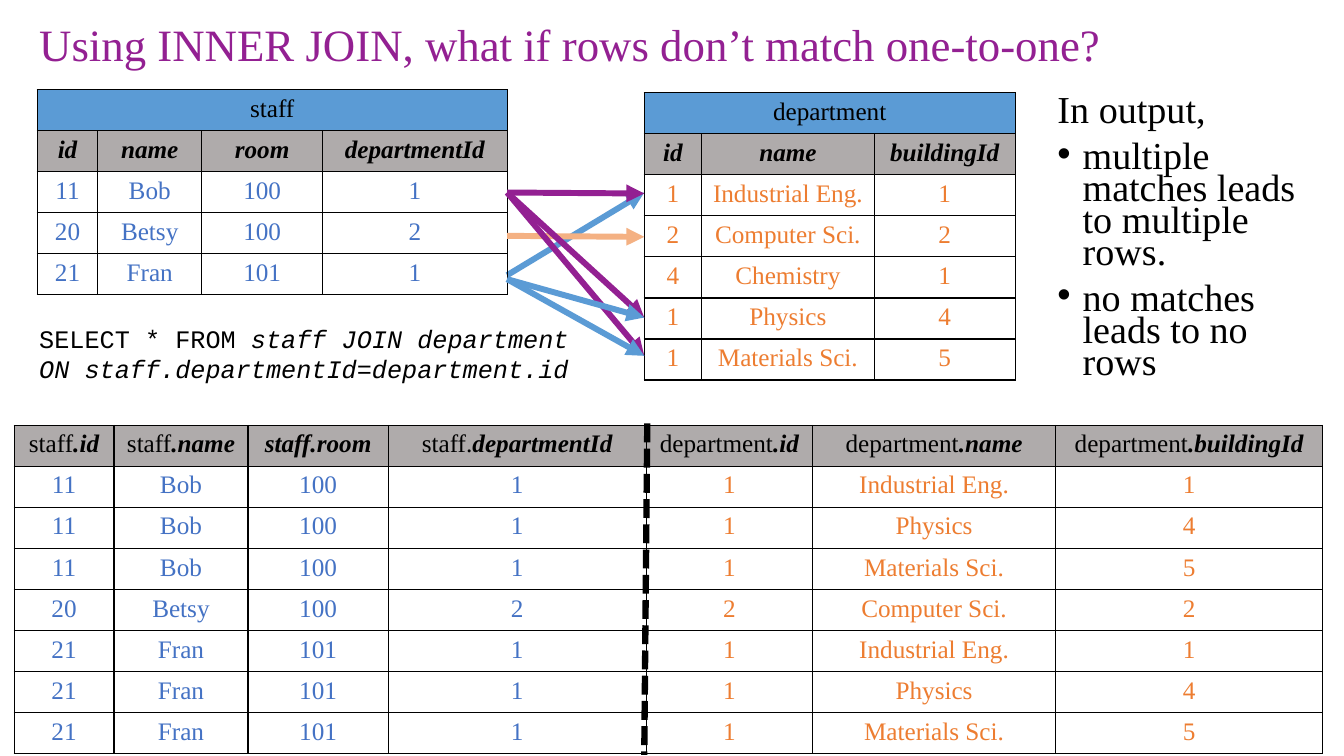
"""Build the slide on INNER JOIN with rows that do not match one-to-one."""
import pptx
import pptx.util
import pptx.dml.color
import pptx.enum.dml
import pptx.enum.shapes
import pptx.enum.text
import pptx.oxml.ns
from lxml import etree

SERIF, MONO = "Times New Roman", "Courier New"
BLACK, PURPLE, BLUE, PEACH = "000000", "932092", "5B9BD5", "F4B183"
GREY, STAFF_INK, DEPARTMENT_INK = "AFABAB", "4472C4", "ED7D31"
ROW = 2.85 / 7

STAFF = [(11, "Bob", 100, 1), (20, "Betsy", 100, 2), (21, "Fran", 101, 1)]
DEPARTMENTS = [
    (1, "Industrial Eng.", 1),
    (2, "Computer Sci.", 2),
    (4, "Chemistry", 1),
    (1, "Physics", 4),
    (1, "Materials Sci.", 5),
]
JOINED = [
    person + department
    for person in STAFF
    for department in DEPARTMENTS
    if person[3] == department[0]
]
STAFF_HEADS = [("", name) for name in ("id", "name", "room", "departmentId")]
DEPARTMENT_HEADS = [("", name) for name in ("id", "name", "buildingId")]
JOINED_HEADS = [
    ("staff", ".id"),
    ("staff", ".name"),
    ("", "staff.room"),
    ("staff.", "departmentId"),
    ("department", ".id"),
    ("department", ".name"),
    ("department", ".buildingId"),
]
STAFF_COLUMNS = [0.6, 1.03, 1.2, 1.83]
DEPARTMENT_COLUMNS = [0.57, 1.71, 1.4]
JOINED_COLUMNS = [0.99, 1.33, 1.39, 2.56, 1.65, 2.41, 2.65]

TITLE = "Using INNER JOIN, what if rows don’t match one-to-one?"
NOTES = [
    ("In output,", False),
    ("multiple matches leads to multiple rows.", True),
    ("no matches leads to no rows", True),
]
QUERY = [
    ("SELECT * FROM ", False),
    ("staff JOIN department ON staff.departmentId=department.id", True),
]
STAFF_EDGE, DEPARTMENT_EDGE = 5.03, 6.39
BACK_ARROWS = [(2.73, 1.91, BLUE)]
MIDDLE_ARROWS = [
    (1.91, 1.92, PURPLE),
    (2.34, 2.35, PEACH),
    (1.91, 3.15, PURPLE),
    (1.91, 3.53, PURPLE),
]
FRONT_ARROWS = [(2.77, 3.15, BLUE), (2.77, 3.53, BLUE)]


def inches(*lengths):
    return [pptx.util.Inches(length) for length in lengths]


def color(code):
    return pptx.dml.color.RGBColor.from_string(code)


def add_span(para, text, size=18, font=SERIF, ink=BLACK, bold=False, italic=False):
    span = para.add_run()
    span.text = text
    span.font.size = pptx.util.Pt(size)
    span.font.name = font
    span.font.color.rgb = color(ink)
    span.font.bold = bold
    span.font.italic = italic


def add_child(parent, tag, **attributes):
    child = etree.SubElement(parent, pptx.oxml.ns.qn(tag))
    for key, value in attributes.items():
        child.set(key, value)
    return child


def add_box(page, left, top, width, height):
    frame = page.shapes.add_textbox(*inches(left, top, width, height)).text_frame
    frame.word_wrap = True
    return frame


def fill_cell(cell, parts, fill=None, ink=BLACK):
    para = cell.text_frame.paragraphs[0]
    para.alignment = pptx.enum.text.PP_ALIGN.CENTER
    for text, strong in parts:
        if text:
            add_span(para, text, ink=ink, bold=strong, italic=strong)
    properties = cell._tc.get_or_add_tcPr()
    for side in ("a:lnL", "a:lnR", "a:lnT", "a:lnB"):
        border = add_child(properties, side, w="12700")
        add_child(add_child(border, "a:solidFill"), "a:srgbClr", val=BLACK)
    if fill:
        cell.fill.solid()
        cell.fill.fore_color.rgb = color(fill)
    else:
        cell.fill.background()


def add_grid(page, left, top, columns, heads, rows, inks, caption=None):
    first = 1 if caption else 0
    count = first + 1 + len(rows)
    frame = page.shapes.add_table(
        count, len(columns), *inches(left, top, sum(columns), count * ROW)
    )
    table = frame.table
    table.first_row = table.horz_banding = False
    for column, width in zip(table.columns, columns):
        column.width = pptx.util.Inches(width)
    for row in table.rows:
        row.height = pptx.util.Inches(ROW)
    if caption:
        table.cell(0, 0).merge(table.cell(0, len(columns) - 1))
        for index in range(len(columns)):
            text = "" if index else caption
            fill_cell(table.cell(0, index), [(text, False)], fill=BLUE)
    for index, (plain, strong) in enumerate(heads):
        parts = [(plain, False), (strong, True)]
        fill_cell(table.cell(first, index), parts, fill=GREY)
    for number, values in enumerate(rows, first + 1):
        for index, (value, ink) in enumerate(zip(values, inks)):
            fill_cell(table.cell(number, index), [(str(value), False)], ink=ink)


def add_line(page, start, end, ink, width):
    line = page.shapes.add_connector(
        pptx.enum.shapes.MSO_CONNECTOR.STRAIGHT, *inches(*start, *end)
    )
    line.line.color.rgb = color(ink)
    line.line.width = pptx.util.Pt(width)
    add_child(line._element.spPr, "a:effectLst")
    return line


def add_arrows(page, arrows):
    for start, end, ink in arrows:
        arrow = add_line(page, (STAFF_EDGE, start), (DEPARTMENT_EDGE, end), ink, 4.25)
        add_child(arrow.line._get_or_add_ln(), "a:tailEnd", type="triangle")


def add_notes(page):
    frame = add_box(page, 10.39, 0.92, 2.73, 3.19)
    for index, (text, bulleted) in enumerate(NOTES):
        para = frame.add_paragraph() if index else frame.paragraphs[0]
        para.line_spacing = 0.7
        para.space_before = pptx.util.Pt(10)
        add_span(para, text, size=27.2)
        if bulleted:
            properties = para._p.get_or_add_pPr()
            properties.set("marL", "228600")
            properties.set("indent", "-228600")
            add_child(properties, "a:buFont", typeface="Arial")
            add_child(properties, "a:buChar", char="•")


def main():
    deck = pptx.Presentation()
    deck.slide_width, deck.slide_height = inches(13.33, 7.5)
    page = deck.slides.add_slide(deck.slide_layouts[6])

    add_arrows(page, BACK_ARROWS)
    add_grid(page, 0.37, 0.89, STAFF_COLUMNS, STAFF_HEADS, STAFF,
             [STAFF_INK] * 4, "staff")
    add_grid(page, DEPARTMENT_EDGE, 0.92, DEPARTMENT_COLUMNS, DEPARTMENT_HEADS,
             DEPARTMENTS, [DEPARTMENT_INK] * 3, "department")
    add_arrows(page, MIDDLE_ARROWS)

    title = add_box(page, 0.29, 0.08, 11.55, 0.77)
    title.vertical_anchor = pptx.enum.text.MSO_ANCHOR.MIDDLE
    title.paragraphs[0].line_spacing = 0.9
    add_span(title.paragraphs[0], TITLE, size=32, ink=PURPLE)
    add_notes(page)

    add_grid(page, 0.14, 4.22, JOINED_COLUMNS, JOINED_HEADS, JOINED,
             [STAFF_INK] * 4 + [DEPARTMENT_INK] * 3)
    divider = add_line(page, (6.42, 4.2), (6.39, 7.49), BLACK, 4.5)
    divider.line.dash_style = pptx.enum.dml.MSO_LINE.SQUARE_DOT
    add_arrows(page, FRONT_ARROWS)

    query = add_box(page, 0.29, 3.16, 5.61, 0.71)
    for text, italic in QUERY:
        add_span(query.paragraphs[0], text, font=MONO, italic=italic)
    deck.save("out.pptx")


if __name__ == "__main__":
    main()
